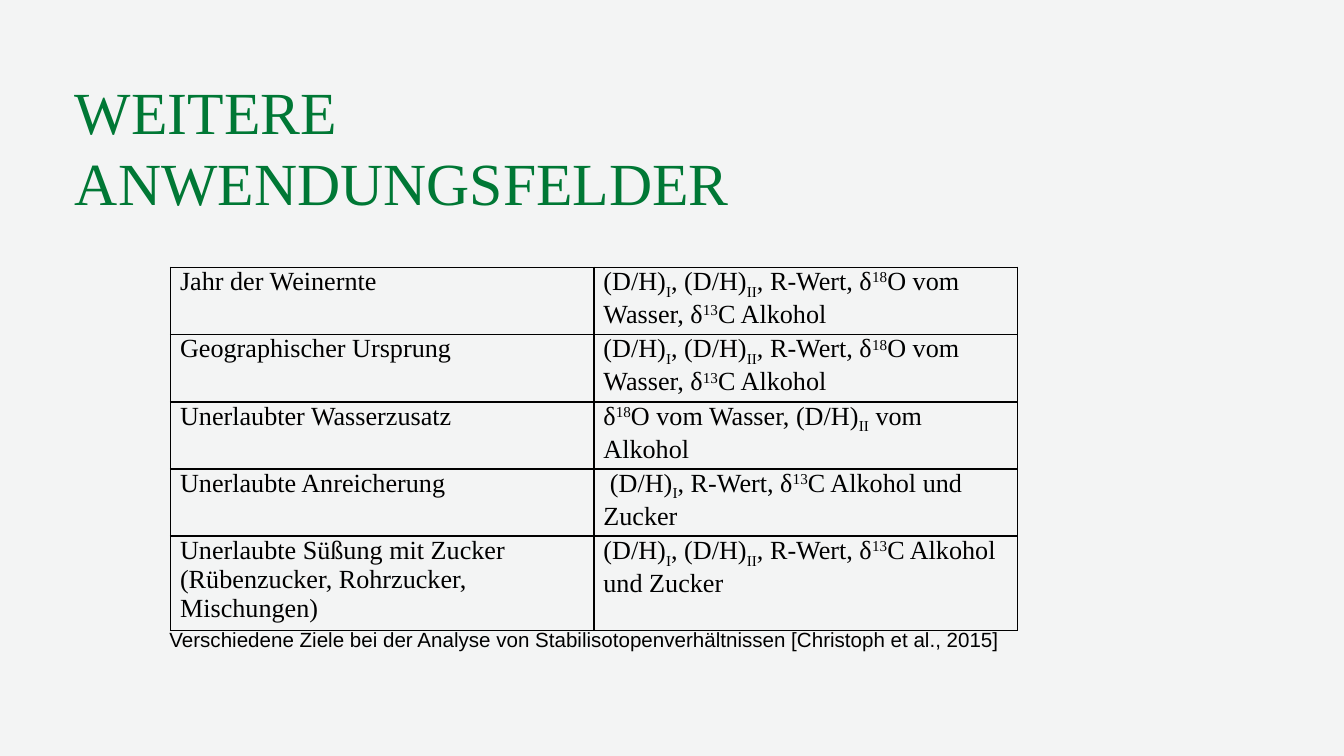
from lxml import etree
from pptx import Presentation
from pptx.dml.color import RGBColor
from pptx.enum.text import MSO_ANCHOR, PP_ALIGN
from pptx.oxml.ns import qn
from pptx.util import Inches, Pt

BOTTOM, MIDDLE = MSO_ANCHOR.BOTTOM, MSO_ANCHOR.MIDDLE
LEFT, CENTER = PP_ALIGN.LEFT, PP_ALIGN.CENTER
SERIF, SANS = "Times New Roman", "Arial"
BLACK, GREEN, PALE = "000000", "007835", "F3F4F4"
BASELINES = {"_": "-25000", "^": "30000"}

# "|" separates runs; "_" opens a subscript run and "^" a superscript run.
DH_1 = "(D/H)|_I"
DH_2 = "(D/H)|_II"
O18, C13 = "δ|^18|O", "δ|^13|C"
WINE_MARKERS = f"{DH_1}|, {DH_2}|, R-Wert, {O18} vom Wasser, {C13} Alkohol"
GOALS = [
    ("Jahr der Weinernte", WINE_MARKERS),
    ("Geographischer Ursprung", WINE_MARKERS),
    ("Unerlaubter Wasserzusatz", f"{O18} vom Wasser, {DH_2}| vom Alkohol"),
    ("Unerlaubte Anreicherung", f" {DH_1}|, R-Wert, {C13} Alkohol und Zucker"),
    ("Unerlaubte Süßung mit Zucker (Rübenzucker, Rohrzucker, Mischungen)",
     f"{DH_1}|, {DH_2}|, R-Wert, {C13} Alkohol und Zucker"),
]


def color(hex_value):
    return RGBColor.from_string(hex_value)


class SlideBuilder:
    def __init__(self, slide):
        self.slide = slide
        slide.background.fill.solid()
        slide.background.fill.fore_color.rgb = color(PALE)

    def runs(self, paragraph, marked_text, size, font, ink):
        for piece in marked_text.split("|"):
            baseline = BASELINES.get(piece[0])
            run = paragraph.add_run()
            run.text = piece[1:] if baseline else piece
            run.font.size = Pt(size)
            run.font.name = font
            run.font.color.rgb = color(ink)
            if baseline:
                run.font._element.set("baseline", baseline)

    def text(self, box, content, size, font, ink, align, anchor,
             wrap=True, bottom=0.05):
        frame = self.slide.shapes.add_textbox(*map(Inches, box)).text_frame
        frame.word_wrap = wrap
        frame.vertical_anchor = anchor
        frame.margin_bottom = Inches(bottom)
        paragraph = frame.paragraphs[0]
        paragraph.alignment = align
        self.runs(paragraph, content, size, font, ink)

    def borders(self, cell):
        """Draw a thin black line on all four sides of the cell."""
        properties = cell._tc.get_or_add_tcPr()
        for position, side in enumerate(("lnL", "lnR", "lnT", "lnB")):
            line = etree.Element(qn(f"a:{side}"), w=str(Pt(1)))
            fill = etree.SubElement(line, qn("a:solidFill"))
            etree.SubElement(fill, qn("a:srgbClr"), val=BLACK)
            properties.insert(position, line)

    def table(self, box, rows, heights):
        table = self.slide.shapes.add_table(
            len(rows), len(rows[0]), *map(Inches, box)).table
        table.first_row = table.horz_banding = False
        for row, height, contents in zip(table.rows, heights, rows):
            row.height = Inches(height)
            for cell, content in zip(row.cells, contents):
                cell.fill.background()
                cell.margin_left = cell.margin_right = Inches(0.07)
                cell.margin_top = cell.margin_bottom = 0
                self.runs(cell.text_frame.paragraphs[0], content,
                          14, SERIF, BLACK)
                self.borders(cell)


def main():
    deck = Presentation()
    deck.slide_width = Inches(10)
    deck.slide_height = deck.slide_width * 9 // 16
    builder = SlideBuilder(deck.slides.add_slide(deck.slide_layouts[6]))
    builder.table((1.27, 1.99, 6.3, 2.7), GOALS, [0.5] * 4 + [0.7])
    builder.text(
        (1.13, 4.61, 6.44, 0.24),
        "Verschiedene Ziele bei der Analyse von Stabilisotopenverhältnissen "
        "[Christoph et al., 2015]",
        11, SANS, BLACK, CENTER, MIDDLE, wrap=False, bottom=0)
    builder.text((0.46, 1.01, 6.07, 0.66), "WEITERE ANWENDUNGSFELDER",
                 32, SERIF, GREEN, LEFT, BOTTOM)
    deck.save("out.pptx")


if __name__ == "__main__":
    main()
